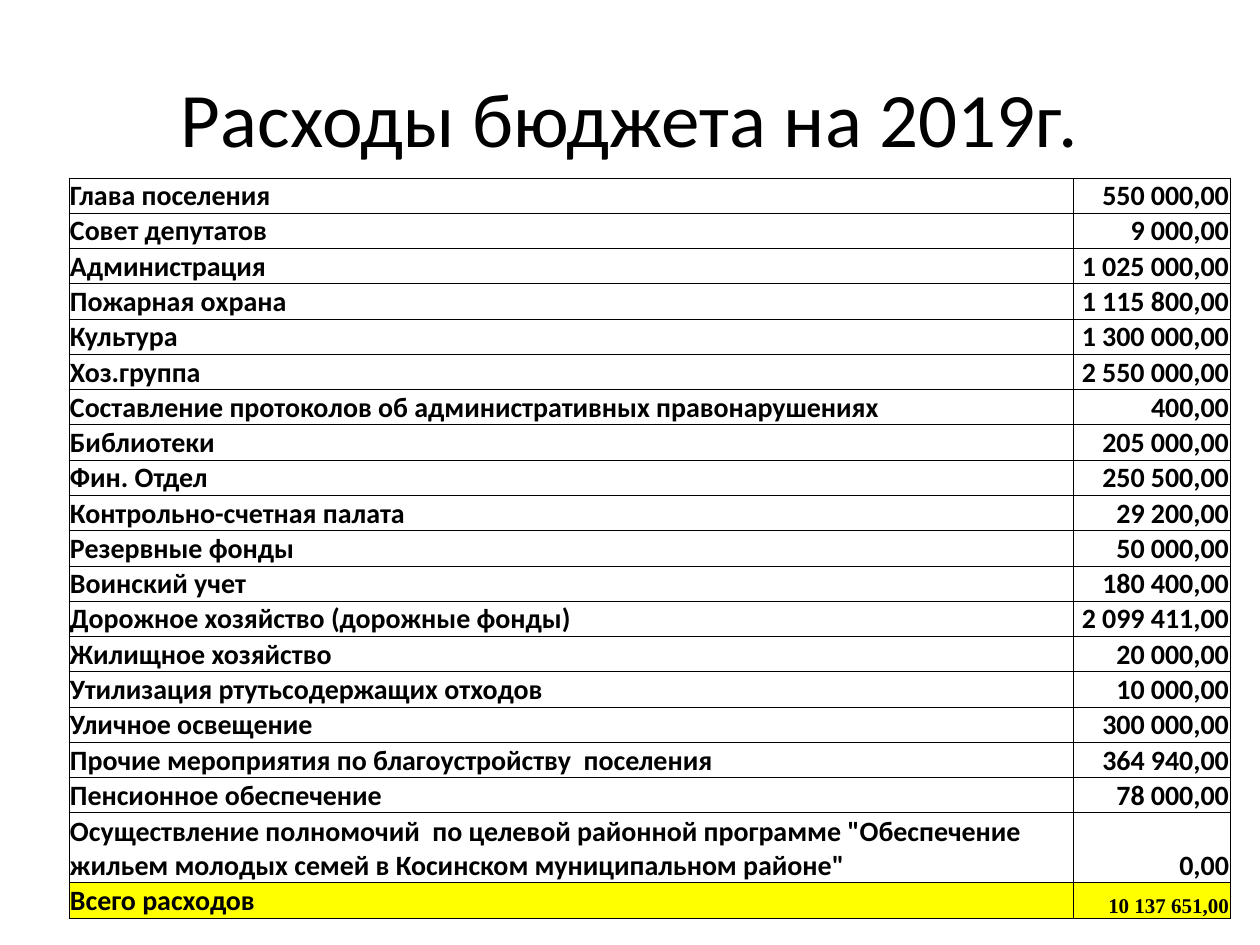
from dataclasses import dataclass

from lxml.etree import SubElement
from pptx import Presentation
from pptx.dml.color import RGBColor
from pptx.enum.text import MSO_ANCHOR, PP_ALIGN
from pptx.oxml.ns import qn
from pptx.util import Emu, Pt

SCALE = 914400 / 126
HUES = {"ink": "000000", "page": "FFFFFF", "total": "FFFF00"}
COLS = (1004, 157)
LINE = 35


@dataclass(frozen=True)
class Item:
    name: str
    cost: str
    lines: int = 1
    fill: str = "page"
    font: str = "Calibri"
    size: int = 16


ITEMS = (
    Item("Глава поселения", "550 000,00"),
    Item("Совет депутатов", "9 000,00"),
    Item("Администрация", "1 025 000,00"),
    Item("Пожарная охрана", "1 115 800,00"),
    Item("Культура", "1 300 000,00"),
    Item("Хоз.группа", "2 550 000,00"),
    Item("Составление протоколов об административных правонарушениях", "400,00"),
    Item("Библиотеки", "205 000,00"),
    Item("Фин. Отдел", "250 500,00"),
    Item("Контрольно-счетная палата", "29 200,00"),
    Item("Резервные фонды", "50 000,00"),
    Item("Воинский учет", "180 400,00"),
    Item("Дорожное хозяйство (дорожные фонды)", "2 099 411,00"),
    Item("Жилищное хозяйство", "20 000,00"),
    Item("Утилизация ртутьсодержащих отходов", "10 000,00"),
    Item("Уличное освещение", "300 000,00"),
    Item("Прочие мероприятия по благоустройству  поселения", "364 940,00"),
    Item("Пенсионное обеспечение", "78 000,00"),
    Item("Осуществление полномочий  по целевой районной программе "
         "\"Обеспечение жильем молодых семей в Косинском муниципальном районе\"",
         "0,00", lines=2),
    Item("Всего расходов", "10 137 651,00", fill="total",
         font="Times New Roman", size=12),
)


def px(num: int) -> Emu:
    return Emu(round(num * SCALE))


def hue(key: str) -> RGBColor:
    return RGBColor.from_string(HUES[key])


def write(frame, text: str, size: int, font: str, align, bold: bool) -> None:
    para = frame.paragraphs[0]
    para.alignment = align
    run = para.add_run()
    run.text = text
    run.font.size = Pt(size)
    run.font.name = font
    run.font.bold = bold
    run.font.color.rgb = hue("ink")


def edge(cell) -> None:
    props = cell._tc.get_or_add_tcPr()
    for side in ("a:lnL", "a:lnR", "a:lnT", "a:lnB"):
        line = SubElement(props, qn(side), w=str(Pt(0.5)))
        fill = SubElement(line, qn("a:solidFill"))
        SubElement(fill, qn("a:srgbClr"), val=HUES["ink"])


def dress(cell, fill: str) -> None:
    cell.margin_left = cell.margin_right = cell.margin_top = px(1)
    cell.margin_bottom = 0
    cell.vertical_anchor = MSO_ANCHOR.BOTTOM
    edge(cell)
    cell.fill.solid()
    cell.fill.fore_color.rgb = hue(fill)


def draw_table(slide, left: int, top: int) -> None:
    high = sum(item.lines for item in ITEMS) * LINE
    table = slide.shapes.add_table(len(ITEMS), len(COLS), px(left), px(top),
                                   px(sum(COLS)), px(high)).table
    table.first_row = table.horz_banding = False
    for col, wide in zip(table.columns, COLS):
        col.width = px(wide)
    for row, item in zip(table.rows, ITEMS):
        row.height = px(item.lines * LINE)
        name, cost = row.cells
        for cell in (name, cost):
            dress(cell, item.fill)
        write(name.text_frame, item.name, 16, "Calibri", PP_ALIGN.LEFT, True)
        write(cost.text_frame, item.cost, item.size, item.font,
              PP_ALIGN.RIGHT, True)


def draw_title(slide, text: str) -> None:
    title = slide.shapes.title
    title.left, title.top = px(63), px(38)
    title.width, title.height = px(1134), px(158)
    title.text_frame.vertical_anchor = MSO_ANCHOR.MIDDLE
    write(title.text_frame, text, 44, "Calibri", PP_ALIGN.CENTER, False)


def main() -> None:
    deck = Presentation()
    deck.slide_width, deck.slide_height = px(1260), px(945)
    slide = deck.slides.add_slide(deck.slide_layouts[5])
    draw_title(slide, "Расходы бюджета на 2019г.")
    draw_table(slide, 69, 178)
    deck.save("out.pptx")


if __name__ == "__main__":
    main()
